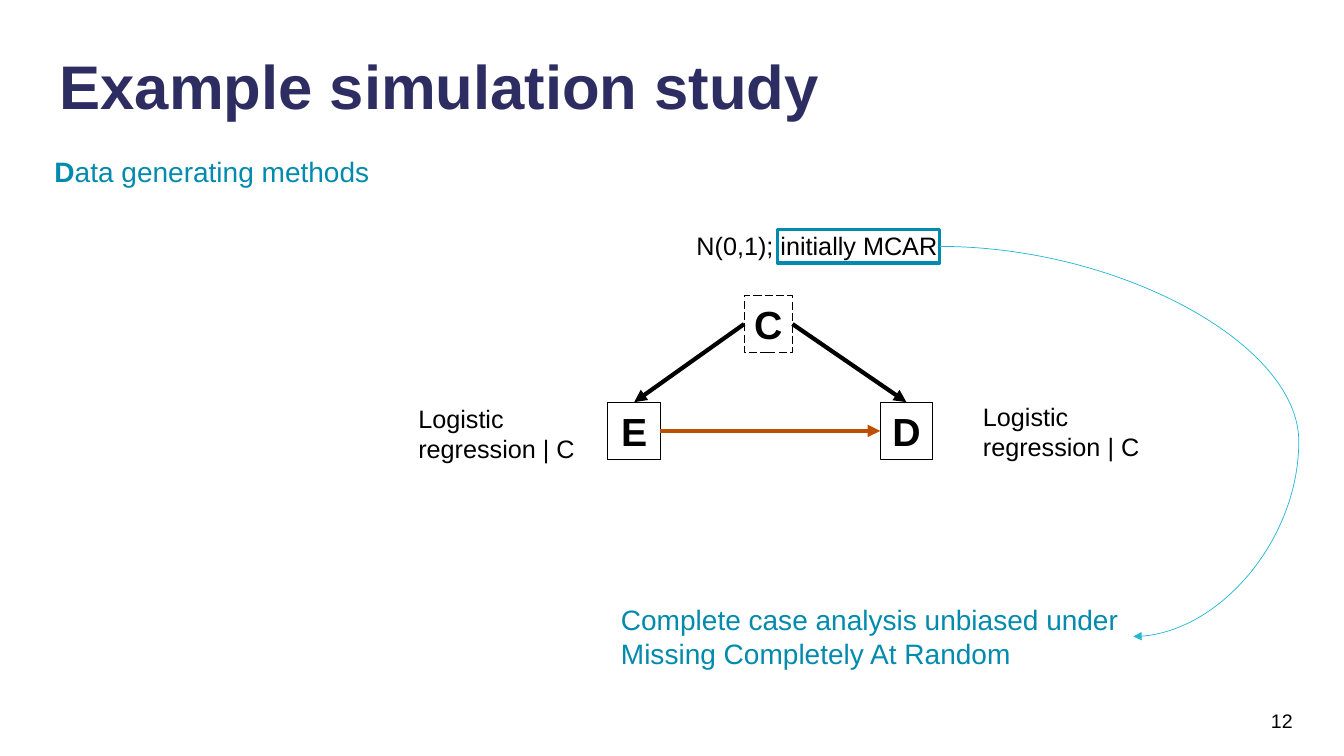
from dataclasses import dataclass

from lxml import etree
from pptx import Presentation
from pptx.dml.color import RGBColor
from pptx.enum import dml, shapes, text
from pptx.oxml.ns import qn
from pptx.util import Inches, Pt


@dataclass(frozen=True)
class Theme:
    font: str = "Arial"
    navy: str = "2E2D62"
    teal: str = "008AAD"
    aqua: str = "22B8D1"
    orange: str = "BF4F00"
    black: str = "000000"
    white: str = "FFFFFF"
    title: int = 44
    node: int = 28
    lead: int = 20
    label: int = 18
    number: int = 14


class SlideBuilder:
    def __init__(self, presentation, theme):
        self.theme = theme
        self.slide = presentation.slides.add_slide(presentation.slide_layouts[5])

    def style(self, paragraph, size, color, bold=False, align=text.PP_ALIGN.LEFT):
        paragraph.alignment = align
        font = paragraph.font
        font.name, font.size, font.bold = self.theme.font, Pt(size), bold
        font.color.rgb = RGBColor.from_string(color)

    def title(self, words, left, top, width, height):
        shape = self.slide.shapes.title
        shape.left, shape.top = Inches(left), Inches(top)
        shape.width, shape.height = Inches(width), Inches(height)
        frame = shape.text_frame
        frame.text = words
        frame.word_wrap = True
        frame.vertical_anchor = text.MSO_ANCHOR.MIDDLE
        self.style(frame.paragraphs[0], self.theme.title, self.theme.navy, bold=True)
        frame.paragraphs[0].line_spacing = 0.9

    def text(self, words, left, top, width, height, size, color,
             align=text.PP_ALIGN.LEFT, anchor=text.MSO_ANCHOR.TOP):
        shape = self.slide.shapes.add_textbox(
            Inches(left), Inches(top), Inches(width), Inches(height))
        frame = shape.text_frame
        frame.text = words
        frame.word_wrap = True
        frame.vertical_anchor = anchor
        self.style(frame.paragraphs[0], size, color, align=align)
        return shape

    def box(self, left, top, width, height, color, weight, dash=None):
        shape = self.slide.shapes.add_shape(
            shapes.MSO_SHAPE.RECTANGLE,
            Inches(left), Inches(top), Inches(width), Inches(height))
        shape.shadow.inherit = False
        shape.fill.background()
        shape.line.color.rgb = RGBColor.from_string(color)
        shape.line.width = Pt(weight)
        if dash:
            shape.line.dash_style = dash
        return shape

    def node(self, letter, left, top, width, dash=None):
        shape = self.box(left, top, width, 0.57, self.theme.black, 0.75, dash)
        frame = shape.text_frame
        frame.text = letter
        frame.word_wrap = False
        self.style(frame.paragraphs[0], self.theme.node, self.theme.black,
                   bold=True, align=text.PP_ALIGN.CENTER)
        return shape

    def arrow(self, source, source_side, target, target_side, color, weight, bend=None):
        """Join two shapes; bend is the curve's overshoot as a share of its width."""
        kind = shapes.MSO_CONNECTOR.CURVE if bend else shapes.MSO_CONNECTOR.STRAIGHT
        connector = self.slide.shapes.add_connector(kind, 0, 0, 0, 0)
        connector.begin_connect(source, source_side)
        connector.end_connect(target, target_side)
        connector.line.color.rgb = RGBColor.from_string(color)
        connector.line.width = Pt(weight)
        properties = connector._element.spPr
        etree.SubElement(connector.line._get_or_add_ln(), qn("a:tailEnd"), type="triangle")
        etree.SubElement(properties, qn("a:effectLst"))
        if bend:
            guides = properties.find(qn("a:prstGeom")).get_or_add_avLst()
            etree.SubElement(guides, qn("a:gd"), name="adj1",
                             fmla=f"val {round(bend * 100000)}")

    def table(self, left, top, height, widths):
        frame = self.slide.shapes.add_table(
            1, len(widths), Inches(left), Inches(top), Inches(sum(widths)), Inches(height))
        table = frame.table
        table.first_row = table.horz_banding = False
        for column, width in zip(table.columns, widths):
            column.width = Inches(width)
        for cell in table.iter_cells():
            self.white_cell(cell)
        return table

    def white_cell(self, cell):
        """Give a cell a translucent white fill and thin white borders."""
        cell.fill.solid()
        cell.fill.fore_color.rgb = RGBColor.from_string(self.theme.white)
        properties = cell._tc.get_or_add_tcPr()
        color = properties.find(qn("a:solidFill"))[0]
        etree.SubElement(color, qn("a:alpha"), val="40000")
        for index, side in enumerate("LRTB"):
            border = etree.Element(qn(f"a:ln{side}"), w=str(Pt(0.5)))
            fill = etree.SubElement(border, qn("a:solidFill"))
            etree.SubElement(fill, qn("a:srgbClr"), val=self.theme.white)
            properties.insert(index, border)

    def heading(self, cell, initial, rest):
        """Write a heading whose initial letter is bold."""
        cell.margin_left = cell.margin_right = Inches(0.05)
        paragraph = cell.text_frame.paragraphs[0]
        paragraph.space_after = Pt(6)
        self.style(paragraph, self.theme.lead, self.theme.teal)
        first = paragraph.add_run()
        first.text = initial
        first.font.bold = True
        paragraph.add_run().text = rest


def main():
    presentation = Presentation()
    presentation.slide_width, presentation.slide_height = Inches(13.33), Inches(7.5)
    theme = Theme()
    builder = SlideBuilder(presentation, theme)
    top, left, right = 0, 1, 3

    builder.title("Example simulation study", 0.49, 0.26, 12.43, 1.25)
    conclusion = builder.text(
        "Complete case analysis unbiased under Missing Completely At Random",
        6.06, 5.93, 5.18, 0.77, theme.lead, theme.teal)
    methods = builder.table(0.49, 1.51, 2.89, [3.75, 8.56])
    builder.heading(methods.cell(0, 0), "D", "ata generating methods")

    confounder = builder.node("C", 7.38, 2.93, 0.48, dml.MSO_LINE.LONG_DASH)
    exposure = builder.node("E", 6.03, 3.99, 0.52)
    disease = builder.node("D", 8.73, 3.99, 0.52)
    builder.arrow(confounder, right, disease, top, theme.black, 3)
    builder.arrow(exposure, right, disease, left, theme.orange, 3)
    builder.arrow(confounder, left, exposure, top, theme.black, 3)

    for words, *place in [
        ("N(0,1); initially MCAR", 6.81, 2.24, 3.44, 0.4),
        ("Logistic regression | C", 4.05, 3.95, 1.79, 0.71),
        ("Logistic regression | C", 9.65, 3.93, 1.88, 0.71),
    ]:
        builder.text(words, *place, theme.label, theme.black)

    highlight = builder.box(7.71, 2.28, 1.61, 0.33, theme.teal, 2.25)
    builder.arrow(highlight, right, conclusion, right, theme.aqua, 0.5, bend=1.855)
    builder.text("12", 9.42, 6.95, 3.5, 0.4, theme.number, theme.black,
                 text.PP_ALIGN.RIGHT, text.MSO_ANCHOR.MIDDLE)
    presentation.save("out.pptx")


if __name__ == "__main__":
    main()
